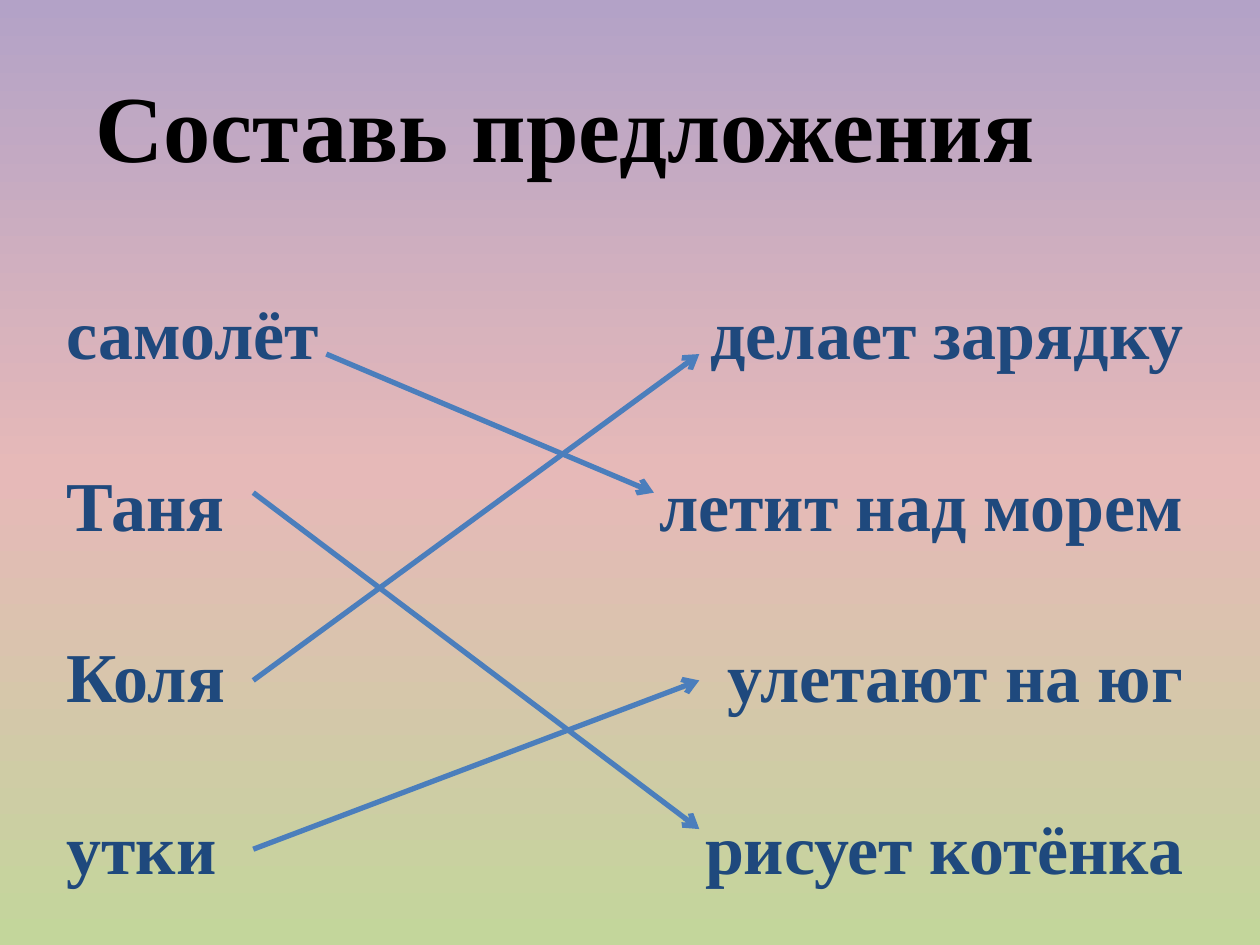
from copy import deepcopy

from lxml import etree
from pptx import Presentation
from pptx.dml.color import RGBColor
from pptx.enum.shapes import MSO_CONNECTOR
from pptx.enum.text import MSO_AUTO_SIZE, PP_ALIGN
from pptx.oxml.ns import qn
from pptx.util import Inches, Pt

STRAIGHT = MSO_CONNECTOR.STRAIGHT
FIT_SHAPE = MSO_AUTO_SIZE.SHAPE_TO_FIT_TEXT
LEFT, CENTER, RIGHT = PP_ALIGN.LEFT, PP_ALIGN.CENTER, PP_ALIGN.RIGHT

FONT = "Times New Roman"
BLACK = RGBColor(0x00, 0x00, 0x00)
NAVY = RGBColor(0x1F, 0x49, 0x7D)
ARROW_BLUE = RGBColor(0x4B, 0x7E, 0xBC)
BACKGROUND_COLORS = [
    RGBColor(0xB3, 0xA2, 0xC7),
    RGBColor(0xE6, 0xB9, 0xB8),
    RGBColor(0xC3, 0xD6, 0x9B),
]

SUBJECTS = ["самолёт", "Таня", "Коля", "утки"]
PREDICATES = ["делает зарядку", "летит над морем", "улетают на юг", "рисует котёнка"]
ARROWS = [
    ((2.59, 2.81), (5.19, 3.91)),
    ((2.01, 6.74), (5.55, 5.4)),
    ((2.01, 5.4), (5.55, 2.81)),
    ((2.01, 3.91), (5.55, 6.58)),
]


def fill_background(slide, colors):
    """Spread the colours evenly from top to bottom."""
    fill = slide.background.fill
    fill.gradient()
    fill.gradient_angle = 270
    stop_list = slide.element.xpath(".//a:gsLst")[0]
    for _ in colors[2:]:
        stop_list.append(deepcopy(stop_list[0]))
    for index, (stop, color) in enumerate(zip(fill.gradient_stops, colors)):
        stop.position = index / (len(colors) - 1)
        stop.color.rgb = color


def add_text(slide, lines, left, top, width, height, *, size, color,
             align=LEFT, wrap=True, gap=0):
    box = slide.shapes.add_textbox(
        Inches(left), Inches(top), Inches(width), Inches(height))
    frame = box.text_frame
    frame.word_wrap = wrap
    frame.auto_size = FIT_SHAPE
    for index, line in enumerate(lines):
        para = frame.add_paragraph() if index else frame.paragraphs[0]
        para.alignment = align
        para.space_before = Pt(gap if index else 0)
        span = para.add_run()
        span.text = line
        span.font.name = FONT
        span.font.size = Pt(size)
        span.font.bold = True
        span.font.color.rgb = color


def add_arrow(slide, start, end):
    points = [Inches(value) for value in (*start, *end)]
    arrow = slide.shapes.add_connector(STRAIGHT, *points)
    arrow.line.color.rgb = ARROW_BLUE
    arrow.line.width = Pt(3)
    etree.SubElement(arrow.line._get_or_add_ln(), qn("a:tailEnd"), type="arrow")
    etree.SubElement(arrow.element.spPr, qn("a:effectLst"))


def main():
    deck = Presentation()
    deck.slide_width = Inches(10)
    deck.slide_height = Inches(7.5)
    slide = deck.slides.add_slide(deck.slide_layouts[6])
    fill_background(slide, BACKGROUND_COLORS)

    add_text(slide, ["Составь предложения"], 0.59, 0.49, 7.79, 1.01,
             size=54, color=BLACK, align=CENTER, wrap=False)
    add_text(slide, SUBJECTS, 0.43, 2.25, 2.44, 4.81,
             size=40, color=NAVY, gap=50)
    add_text(slide, PREDICATES, 3.86, 2.25, 5.63, 4.81,
             size=40, color=NAVY, align=RIGHT, gap=50)
    for start, end in ARROWS:
        add_arrow(slide, start, end)

    deck.save("out.pptx")


if __name__ == "__main__":
    main()
